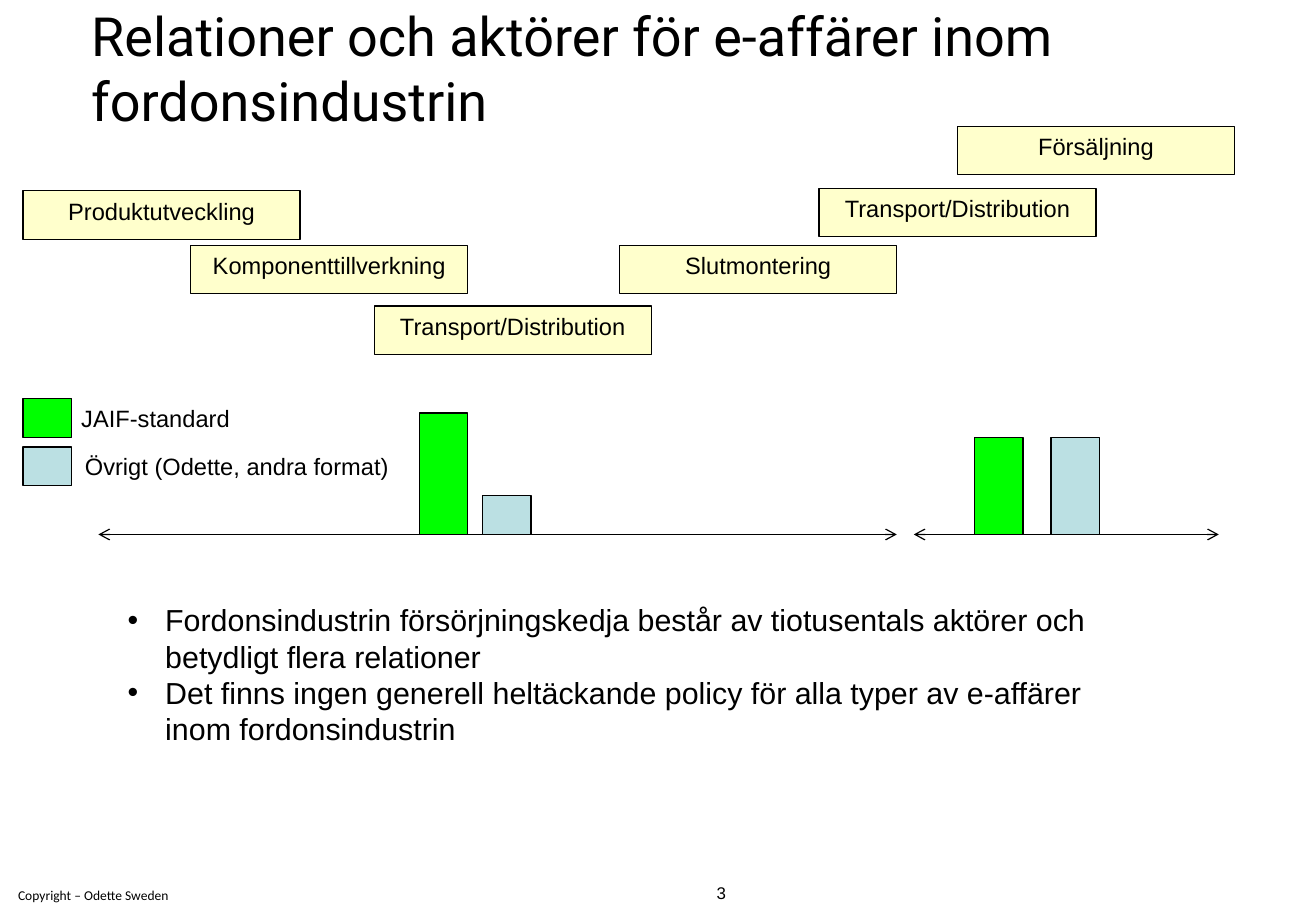
from lxml import etree
from pptx import Presentation
from pptx.dml.color import RGBColor
from pptx.enum.shapes import MSO_CONNECTOR, MSO_SHAPE
from pptx.enum.text import MSO_ANCHOR, MSO_AUTO_SIZE, PP_ALIGN
from pptx.oxml.ns import qn
from pptx.util import Pt

PX = 9144
LEFT, CENTER = PP_ALIGN.LEFT, PP_ALIGN.CENTER
TOP, MIDDLE = MSO_ANCHOR.TOP, MSO_ANCHOR.MIDDLE
NO_AUTOFIT = MSO_AUTO_SIZE.NONE
RECTANGLE = MSO_SHAPE.RECTANGLE
STRAIGHT = MSO_CONNECTOR.STRAIGHT

BLACK = "000000"
CREAM = "FFFFCC"
JAIF_GREEN = "00FF00"
OTHER_BLUE = "BBE0E3"
BASELINE = 440
BAR_WIDTH = 40
STAGE_SIZE = (228, 40)
SWATCH_SIZE = (40, 32)

STAGES = [
    ("Produktutveckling", 19, 157),
    ("Komponenttillverkning", 157, 202),
    ("Transport/Distribution", 308, 252),
    ("Slutmontering", 510, 202),
    ("Transport/Distribution", 674, 155),
    ("Försäljning", 788, 104),
]
SPANS = [(81, 738), (752, 1003)]
BARS = [
    (345, 100, JAIF_GREEN),
    (397, 32, OTHER_BLUE),
    (802, 80, JAIF_GREEN),
    (865, 80, OTHER_BLUE),
]
LEGEND = [
    ("JAIF-standard", JAIF_GREEN, 328, (57, 328, 143, 34)),
    ("Övrigt (Odette, andra format)", OTHER_BLUE, 368, (60, 367, 271, 34)),
]
POINTS = [
    "Fordonsindustrin försörjningskedja består av tiotusentals aktörer och "
    "betydligt flera relationer",
    "Det finns ingen generell heltäckande policy för alla typer av e-affärer "
    "inom fordonsindustrin",
]


def px(*lengths):
    return [length * PX for length in lengths]


def color(value):
    return RGBColor.from_string(value)


def write_text(frame, text, size=14, font="Arial", align=LEFT, anchor=TOP,
               wrap=True, hanging=0):
    frame.text = text
    frame.word_wrap = wrap
    frame.auto_size = NO_AUTOFIT
    frame.vertical_anchor = anchor
    for paragraph in frame.paragraphs:
        paragraph.alignment = align
        paragraph.space_before = Pt(0)
        if hanging:
            properties = paragraph._p.get_or_add_pPr()
            properties.set("marL", str(hanging * PX))
            properties.set("indent", str(-hanging * PX))
        paragraph.font.size = Pt(size)
        paragraph.font.name = font
        for run in paragraph.runs:
            run.font.size = Pt(size)
            run.font.name = font
            run.font.color.rgb = color(BLACK)


def fill_placeholder(placeholder, box, text, **style):
    (placeholder.left, placeholder.top,
     placeholder.width, placeholder.height) = px(*box)
    write_text(placeholder.text_frame, text, **style)


def add_label(slide, box, text, **style):
    write_text(slide.shapes.add_textbox(*px(*box)).text_frame, text, **style)


def add_rectangle(slide, box, fill):
    rectangle = slide.shapes.add_shape(RECTANGLE, *px(*box))
    rectangle.shadow.inherit = False
    rectangle.fill.solid()
    rectangle.fill.fore_color.rgb = color(fill)
    rectangle.line.color.rgb = color(BLACK)
    rectangle.line.width = Pt(0.75)
    return rectangle


def add_span(slide, start, end):
    span = slide.shapes.add_connector(
        STRAIGHT, *px(start, BASELINE, end, BASELINE))
    span.line.color.rgb = color(BLACK)
    span.line.width = Pt(0.75)
    outline = span.line._get_or_add_ln()
    for arrowhead in ("a:headEnd", "a:tailEnd"):
        etree.SubElement(outline, qn(arrowhead), type="arrow")
    etree.SubElement(span._element.spPr, qn("a:effectLst"))


def main():
    deck = Presentation()
    deck.slide_width, deck.slide_height = px(1083, 750)
    slide = deck.slides.add_slide(deck.slide_layouts[1])
    title, points = slide.placeholders

    fill_placeholder(title, (65, 12, 863, 87),
                     "Relationer och aktörer för e-affärer inom fordonsindustrin",
                     size=32, font="Roboto", anchor=MIDDLE)
    fill_placeholder(points, (95, 490, 851, 131), "\n".join(POINTS),
                     size=18, hanging=31)

    for name, left, top in STAGES:
        stage = add_rectangle(slide, (left, top, *STAGE_SIZE), CREAM)
        write_text(stage.text_frame, name, align=CENTER)

    for start, end in SPANS:
        add_span(slide, start, end)
    for left, height, fill in BARS:
        add_rectangle(slide, (left, BASELINE - height, BAR_WIDTH, height), fill)

    for name, fill, top, label_box in LEGEND:
        add_rectangle(slide, (19, top, *SWATCH_SIZE), fill)
        add_label(slide, label_box, name, wrap=False)

    add_label(slide, (5, 725, 575, 24), "Copyright – Odette Sweden",
              size=8, font="Calibri")
    add_label(slide, (580, 725, 253, 20), "3", size=10, anchor=MIDDLE)
    deck.save("out.pptx")


if __name__ == "__main__":
    main()
